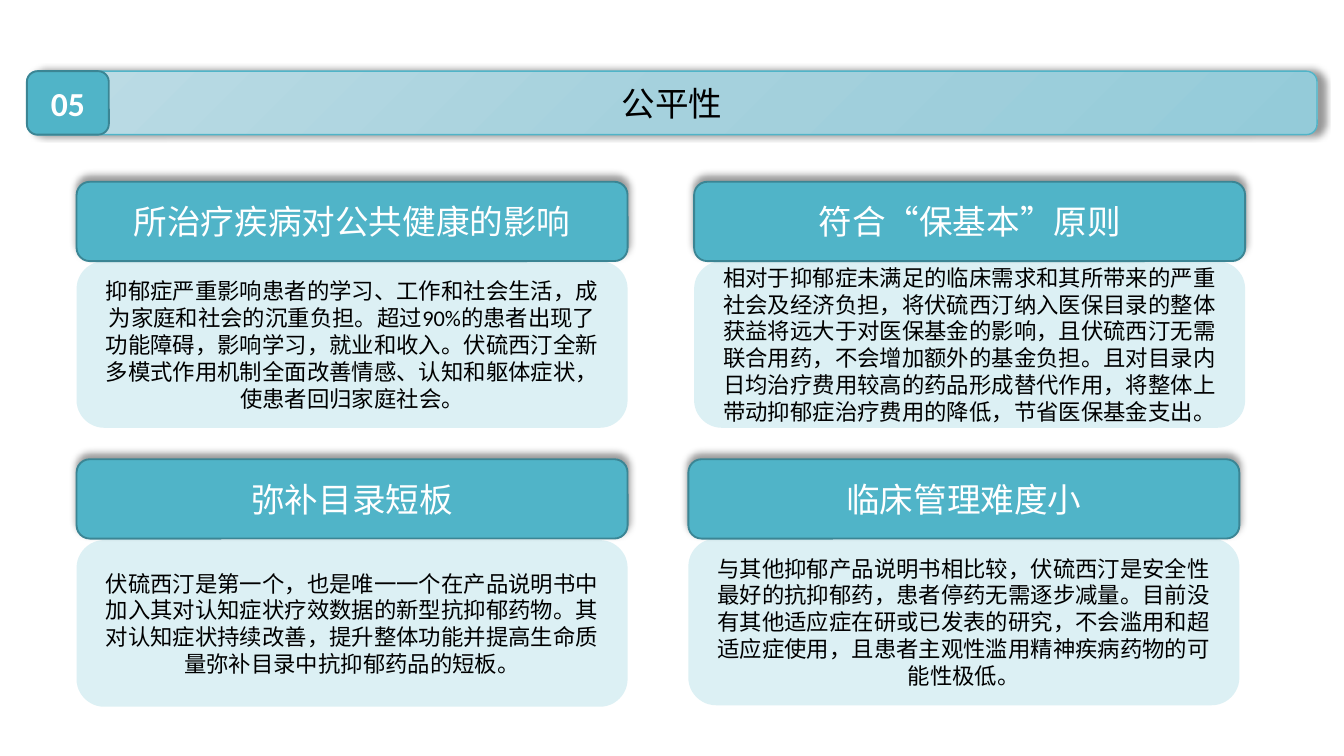
from dataclasses import dataclass

import pptx
import pptx.dml.color
import pptx.enum.shapes
import pptx.enum.text
import pptx.oxml
import pptx.oxml.ns
import pptx.util


@dataclass(frozen=True)
class Theme:
    font: str = "Calibri"
    heading_pt: int = 18
    body_pt: int = 12
    accent: str = "50B4C8"
    edge: str = "3B8594"
    pale: str = "DCF0F4"
    dark: str = "000000"
    light: str = "FFFFFF"
    banner: tuple[str, ...] = ("BDDCE5", "A5D1DD", "94CBD9")


@dataclass(frozen=True)
class Box:
    """Place and size in percent of the slide."""
    x: float
    y: float
    w: float
    h: float


@dataclass(frozen=True)
class Card:
    x: float
    row: int
    heading: str
    body: str
    gap: float = 0


THEME = Theme()
SLIDE_W = pptx.util.Inches(10)
SLIDE_H = SLIDE_W * 9 // 16
BANNER = Box(2, 9.42, 96, 8.4)
NUMBER = Box(2, 9.42, 6.1, 8.4)
ROW_TOP, ROW_STEP = 24.05, 36.7
CARD_W, HEAD_H, BODY_H = 41, 10.5, 22.04

CARDS = (
    Card(5.7, 0, "所治疗疾病对公共健康的影响",
         "抑郁症严重影响患者的学习、工作和社会生活，成为家庭和社会的沉重负担。"
         "超过90%的患者出现了功能障碍，影响学习，就业和收入。"
         "伏硫西汀全新多模式作用机制全面改善情感、认知和躯体症状，使患者回归家庭社会。"),
    Card(51.65, 0, "符合“保基本”原则",
         "相对于抑郁症未满足的临床需求和其所带来的严重社会及经济负担，"
         "将伏硫西汀纳入医保目录的整体获益将远大于对医保基金的影响，"
         "且伏硫西汀无需联合用药，不会增加额外的基金负担。"
         "且对目录内日均治疗费用较高的药品形成替代作用，"
         "将整体上带动抑郁症治疗费用的降低，节省医保基金支出。"),
    Card(5.7, 1, "弥补目录短板",
         "伏硫西汀是第一个，也是唯一一个在产品说明书中加入其对认知症状疗效数据的新型抗抑郁药物。"
         "其对认知症状持续改善，提升整体功能并提高生命质量弥补目录中抗抑郁药品的短板。",
         gap=0.2),
    Card(51.22, 1, "临床管理难度小",
         "与其他抑郁产品说明书相比较，伏硫西汀是安全性最好的抗抑郁药，患者停药无需逐步减量。"
         "目前没有其他适应症在研或已发表的研究，不会滥用和超适应症使用，"
         "且患者主观性滥用精神疾病药物的可能性极低。"),
)


def rgb(value: str):
    return pptx.dml.color.RGBColor.from_string(value)


def emu(box: Box) -> tuple[int, int, int, int]:
    return (int(SLIDE_W * box.x / 100), int(SLIDE_H * box.y / 100),
            int(SLIDE_W * box.w / 100), int(SLIDE_H * box.h / 100))


def xml(text: str):
    """Parse one DrawingML element written with the a: prefix."""
    return pptx.oxml.parse_xml(
        text.replace(" ", f' {pptx.oxml.ns.nsdecls("a")} ', 1))


def write(sp, text: str, *, size: int, color: str, bold: bool = False) -> None:
    tf = sp.text_frame
    tf.word_wrap = True
    tf.auto_size = pptx.enum.text.MSO_AUTO_SIZE.NONE
    tf.vertical_anchor = pptx.enum.text.MSO_ANCHOR.MIDDLE
    p = tf.paragraphs[0]
    p.alignment = pptx.enum.text.PP_ALIGN.CENTER
    r = p.add_run()
    r.text = text
    r.font.name = THEME.font
    r.font.size = pptx.util.Pt(size)
    r.font.bold = bold
    r.font.color.rgb = rgb(color)


def outline(sp, color: str, width: float) -> None:
    sp.line.color.rgb = rgb(color)
    sp.line.width = pptx.util.Pt(width)


def cast_shadow(sp, angle: int) -> None:
    effects = sp._element.spPr.find(pptx.oxml.ns.qn("a:effectLst"))
    effects.append(xml(
        f'<a:outerShdw blurRad="{pptx.util.Pt(4)}" dist="{pptx.util.Pt(3)}" '
        f'dir="{angle * 60000}" algn="ctr" rotWithShape="0">'
        f'<a:srgbClr val="{THEME.dark}"><a:alpha val="40000"/></a:srgbClr>'
        '</a:outerShdw>'))


def add_panel(slide, box: Box, fill: str):
    sp = slide.shapes.add_shape(
        pptx.enum.shapes.MSO_SHAPE.ROUNDED_RECTANGLE, *emu(box))
    sp.shadow.inherit = False
    sp.fill.solid()
    sp.fill.fore_color.rgb = rgb(fill)
    sp.line.fill.background()
    return sp


def fill_gradient(sp, colors: tuple[str, ...], angle: int) -> None:
    stops = "".join(
        f'<a:gs pos="{100000 * i // (len(colors) - 1)}"><a:srgbClr val="{color}"/></a:gs>'
        for i, color in enumerate(colors))
    spPr = sp._element.spPr
    spPr.replace(spPr.find(pptx.oxml.ns.qn("a:solidFill")), xml(
        f'<a:gradFill rotWithShape="1"><a:gsLst>{stops}</a:gsLst>'
        f'<a:lin ang="{angle * 60000}" scaled="0"/></a:gradFill>'))


def draw_banner(slide, text: str, number: str) -> None:
    bar = add_panel(slide, BANNER, THEME.accent)
    fill_gradient(bar, THEME.banner, 45)
    outline(bar, THEME.accent, 0.75)
    cast_shadow(bar, 0)

    title = slide.shapes.title
    title.left, title.top, title.width, title.height = emu(BANNER)
    write(title, text, size=THEME.heading_pt, color=THEME.dark)
    bar._element.addnext(title._element)

    tag = add_panel(slide, NUMBER, THEME.accent)
    outline(tag, THEME.edge, 1)
    write(tag, number, size=THEME.heading_pt, color=THEME.light, bold=True)


def draw_card(slide, card: Card) -> None:
    top = ROW_TOP + card.row * ROW_STEP
    body = add_panel(
        slide, Box(card.x, top + HEAD_H + card.gap, CARD_W, BODY_H), THEME.pale)
    write(body, card.body, size=THEME.body_pt, color=THEME.dark)
    head = add_panel(slide, Box(card.x, top, CARD_W, HEAD_H), THEME.accent)
    outline(head, THEME.edge, 1)
    cast_shadow(head, 270)
    write(head, card.heading, size=THEME.heading_pt, color=THEME.light)


def main() -> None:
    prs = pptx.Presentation()
    prs.slide_width, prs.slide_height = SLIDE_W, SLIDE_H
    slide = prs.slides.add_slide(prs.slide_layouts.get_by_name("Title Only"))
    draw_banner(slide, "公平性", "05")
    for card in CARDS:
        draw_card(slide, card)
    prs.save("out.pptx")


if __name__ == "__main__":
    main()
